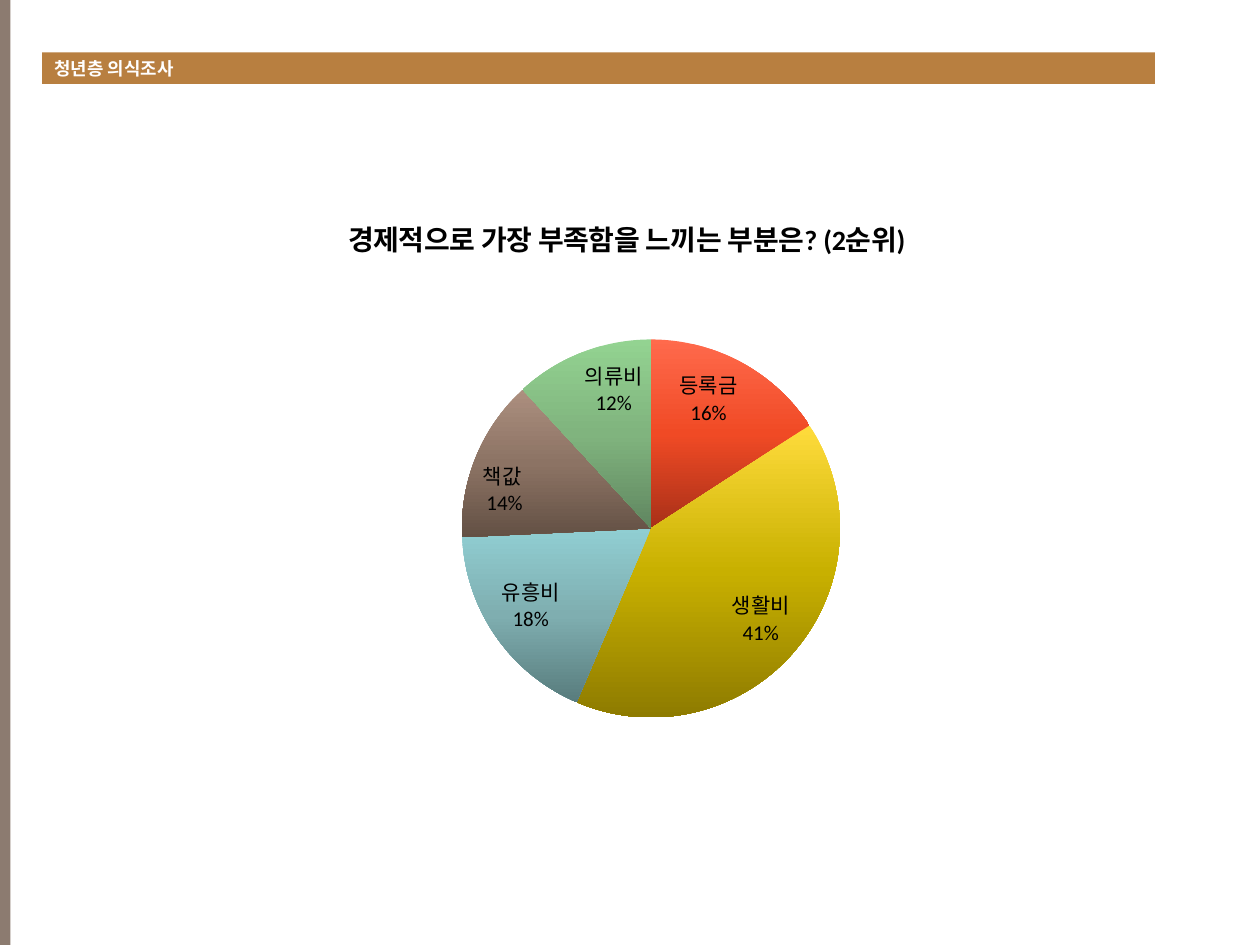
from copy import deepcopy

from lxml import etree
from pptx import Presentation
from pptx import util as u
from pptx.chart import data as chart_data
from pptx.dml import color as dml
from pptx.enum import chart as charts, shapes, text
from pptx.oxml import ns

QUESTION = "경제적으로 가장 부족함을 느끼는 부분은? (2순위) "
SHARES = {
    "등록금": (16, ("FF6A4C", "F04A25", "A83018")),
    "생활비": (41, ("FFDC3C", "C8B000", "8E7B00")),
    "유흥비": (18, ("90CED2", "7FAEB0", "587C7D")),
    "책값 ": (14, ("AC8F7F", "8C7364", "635044")),
    "의류비": (12, ("93D391", "80B47E", "608660")),
}
PLOT_AREA = {"x": 0.3, "y": 0.26, "w": 0.45, "h": 0.68}


def rgb(value):
    return dml.RGBColor.from_string(value)


def apply(target, values):
    for name, value in values.items():
        setattr(target, name, value)


def add_node(parent, tag, value):
    return etree.SubElement(parent, ns.qn(tag), val=str(value))


class SlideBuilder:
    font = "Calibri"

    def __init__(self, slide):
        self.slide = slide

    def style(self, font, size, color, bold=False):
        apply(font, {"name": self.font, "size": u.Pt(size), "bold": bold})
        font.color.rgb = rgb(color)

    def bar(self, left, top, width, height, color):
        box = self.slide.shapes.add_shape(
            shapes.MSO_SHAPE.RECTANGLE, *map(u.Pt, (left, top, width, height)))
        box.shadow.inherit = False
        box.fill.solid()
        box.fill.fore_color.rgb = rgb(color)
        box.line.fill.background()
        return box

    def heading(self, words, bounds, color):
        box = self.bar(*bounds, color)
        apply(box.text_frame, {
            "vertical_anchor": text.MSO_ANCHOR.MIDDLE, "word_wrap": True,
            "margin_top": 0, "margin_bottom": 0})
        para = box.text_frame.paragraphs[0]
        para.alignment = text.PP_ALIGN.LEFT
        span = para.add_run()
        span.text = words
        self.style(span.font, 10.2, "FFFFFF", True)

    def pie(self, title, shares, bounds):
        values = chart_data.CategoryChartData()
        values.categories = list(shares)
        values.add_series(title, [share for share, _ in shares.values()])
        chart = self.slide.shapes.add_chart(
            charts.XL_CHART_TYPE.PIE, *map(u.Pt, bounds), values).chart
        self.style(chart.font, 18, "000000")
        chart.has_legend = False
        span = chart.chart_title.text_frame.paragraphs[0].add_run()
        span.text = title
        self.style(span.font, 16, "000000", True)

        plot = chart.plots[0]
        plot.vary_by_categories = True
        series = plot.series[0]
        labels = series.data_labels
        apply(labels, {
            "show_percentage": True, "show_category_name": True,
            "show_value": False, "show_legend_key": False,
            "number_format": "0%", "number_format_is_linked": False,
            "position": charts.XL_LABEL_POSITION.INSIDE_END})
        self.style(labels.font, 12, "000000")
        for index, (_, colors) in enumerate(shares.values()):
            self.shade(series.points[index], colors)
        self.place_plot(chart)

    def shade(self, point, colors):
        point.format.line.fill.background()
        fill = point.format.fill
        fill.gradient()
        fill.gradient_angle = 270
        first = fill.gradient_stops[0]._gs
        first.addnext(deepcopy(first))
        last = len(colors) - 1
        for order, (stop, color) in enumerate(zip(fill.gradient_stops, colors)):
            stop.color.rgb = rgb(color)
            stop.position = order / last

    def place_plot(self, chart):
        area = chart._chartSpace.chart.plotArea
        for old in area.findall(ns.qn("c:layout")):
            area.remove(old)
        layout = etree.Element(ns.qn("c:layout"))
        manual = etree.SubElement(layout, ns.qn("c:manualLayout"))
        add_node(manual, "c:layoutTarget", "inner")
        for side in "xy":
            add_node(manual, f"c:{side}Mode", "edge")
        for name, value in PLOT_AREA.items():
            add_node(manual, f"c:{name}", value)
        area.insert(0, layout)


def main():
    deck = Presentation()
    apply(deck, {"slide_width": u.Pt(720), "slide_height": u.Pt(540)})
    page = SlideBuilder(deck.slides.add_slide(deck.slide_layouts[6]))
    page.bar(0, 0, 6, 540, "8C7B70")
    page.heading("청년층 의식조사", (24, 30, 636, 18), "B87F40")
    page.pie(QUESTION, SHARES, (120, 110, 480, 320))
    deck.save("out.pptx")


if __name__ == "__main__":
    main()
